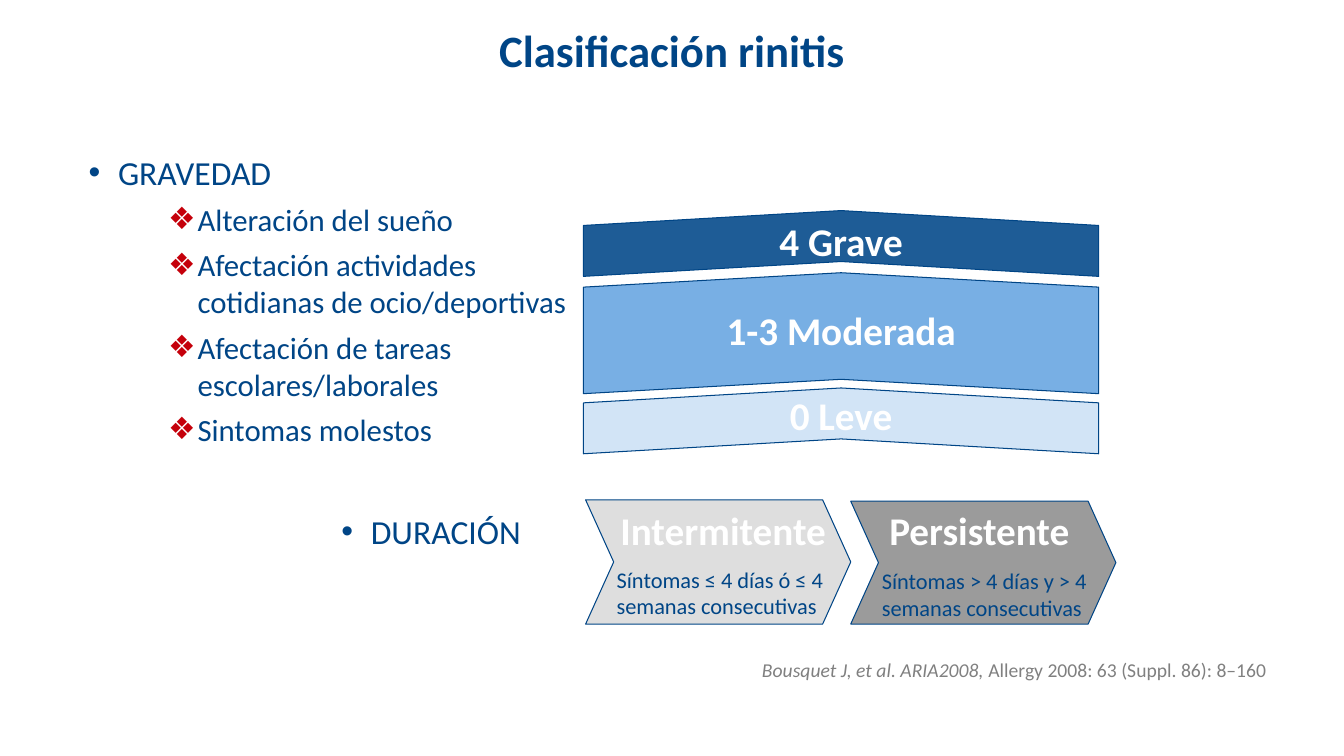
from lxml.etree import SubElement
from pptx import Presentation
from pptx.dml.color import RGBColor
from pptx.enum.shapes import MSO_SHAPE
from pptx.enum.text import MSO_ANCHOR, MSO_AUTO_SIZE, PP_ALIGN
from pptx.oxml.ns import qn
from pptx.util import Pt

NAVY, WHITE, RED, GREY = "004586", "FFFFFF", "C5000B", "808080"


def colour(value):
    return RGBColor.from_string(value)


def set_bullet(paragraph, character=None, bullet_colour=NAVY, margin=0, hanging=0):
    """Set the bullet and indents; without a character the bullet is turned off."""
    properties = paragraph._p.get_or_add_pPr()
    properties.set("marL", str(Pt(margin)))
    properties.set("indent", str(-Pt(hanging)))
    if character is None:
        SubElement(properties, qn("a:buNone"))
        return
    fill = SubElement(properties, qn("a:buClr"))
    SubElement(fill, qn("a:srgbClr"), val=bullet_colour)
    SubElement(properties, qn("a:buFont"), typeface="Arial")
    SubElement(properties, qn("a:buChar"), char=character)


class SlideBuilder:
    font_name = "Calibri"

    def __init__(self, slide):
        self.slide = slide
        self.shapes = slide.shapes

    def start_group(self):
        self.shapes = self.slide.shapes.add_group_shape().shapes

    def style(self, paragraph, size, text_colour=NAVY, bold=False, align=PP_ALIGN.LEFT):
        paragraph.alignment = align
        font = paragraph.font
        font.name, font.size, font.bold = self.font_name, Pt(size), bold
        font.color.rgb = colour(text_colour)

    def placeholder(self, index, left, top, width, height, anchor=MSO_ANCHOR.TOP):
        shape = self.slide.placeholders[index]
        shape.left, shape.top = Pt(left), Pt(top)
        shape.width, shape.height = Pt(width), Pt(height)
        frame = shape.text_frame
        frame.auto_size = MSO_AUTO_SIZE.NONE
        frame.vertical_anchor = anchor
        return frame

    def text_box(self, left, top, width, height, text, size, anchor=MSO_ANCHOR.MIDDLE, **style):
        box = self.shapes.add_textbox(Pt(left), Pt(top), Pt(width), Pt(height))
        frame = box.text_frame
        frame.word_wrap = True
        frame.vertical_anchor = anchor
        paragraph = frame.paragraphs[0]
        paragraph.text = text
        self.style(paragraph, size, **style)
        return paragraph

    def label(self, center_x, center_y, width, text):
        height = 24
        self.text_box(center_x - width / 2, center_y - height / 2, width, height, text, 28,
                      text_colour=WHITE, bold=True, align=PP_ALIGN.CENTER)

    def chevron(self, left, top, width, height, fill, point, rotation=0):
        shape = self.shapes.add_shape(MSO_SHAPE.CHEVRON, Pt(left), Pt(top), Pt(width), Pt(height))
        shape.adjustments[0] = point
        shape.rotation = rotation
        shape.shadow.inherit = False
        shape.fill.solid()
        shape.fill.fore_color.rgb = colour(fill)
        shape.line.color.rgb = colour(NAVY)
        shape.line.width = Pt(0.75)

    def severity_band(self, center_y, thickness, fill, point, label_y, text):
        """Draw a chevron that points upwards, with its label."""
        center_x, length = 600.8, 368
        self.chevron(center_x - thickness / 2, center_y - length / 2, thickness, length,
                     fill, point, rotation=270)
        self.label(center_x, label_y, 188, text)

    def duration_step(self, left, top, fill, label_x, title, detail):
        bottom = 445.8
        self.chevron(left, top, 189.4, bottom - top, fill, 0.226)
        self.text_box(left + 15.1, top + 47.5, 165.6, 37.4, detail, 16)
        self.label(label_x, 378.7, 170.6, title)


def main():
    presentation = Presentation()
    presentation.slide_width, presentation.slide_height = Pt(960), Pt(540)
    slide = presentation.slides.add_slide(presentation.slide_layouts[3])
    builder = SlideBuilder(slide)

    title = builder.placeholder(0, 48, 12, 864, 47.5, MSO_ANCHOR.MIDDLE).paragraphs[0]
    title.text = "Clasificación rinitis"
    builder.style(title, 32, bold=True, align=PP_ALIGN.CENTER)

    criteria = builder.placeholder(1, 13.7, 105, 422, 248)
    heading = criteria.paragraphs[0]
    heading.text = "GRAVEDAD"
    set_bullet(heading, "•", margin=63.4, hanging=21)
    heading.space_before = Pt(0)
    builder.style(heading, 24)
    for text in (
        "Alteración del sueño",
        "Afectación actividades cotidianas de ocio/deportivas",
        "Afectación de tareas escolares/laborales",
        "Sintomas molestos",
    ):
        paragraph = criteria.add_paragraph()
        paragraph.text = text
        paragraph.level = 1
        set_bullet(paragraph, "❖", RED, margin=120.2, hanging=21)
        paragraph.space_before = Pt(6)
        builder.style(paragraph, 22)

    reference = builder.placeholder(2, 0, 466, 912, 23).paragraphs[0]
    set_bullet(reference)
    reference.space_before = Pt(0)
    builder.style(reference, 14, GREY, align=PP_ALIGN.RIGHT)
    for text, italic in (
        ("Bousquet J, et al. ARIA2008, ", True),
        ("Allergy 2008: 63 (Suppl. 86): 8–160", False),
    ):
        run = reference.add_run()
        run.text = text
        run.font.italic = italic

    builder.start_group()
    builder.severity_band(300.6, 47, "D2E4F6", 0.226, 296.6, "0 Leve")
    builder.severity_band(238, 86.4, "78AFE4", 0.119, 235.4, "1-3 Moderada")
    builder.severity_band(173.9, 47, "1E5C96", 0.226, 172, "4 Grave")

    builder.start_group()
    duration = builder.text_box(194.4, 361.4, 206, 38, "DURACIÓN", 24, MSO_ANCHOR.TOP)
    set_bullet(duration, "•", margin=63.4, hanging=21)
    builder.duration_step(418.3, 357, "DEDEDE", 516.6, "Intermitente",
                          "Síntomas ≤ 4 días ó ≤ 4 semanas consecutivas")
    builder.duration_step(607.7, 358, "9B9B9B", 699.5, "Persistente",
                          "Síntomas > 4 días y > 4 semanas consecutivas")

    presentation.save("out.pptx")


if __name__ == "__main__":
    main()
